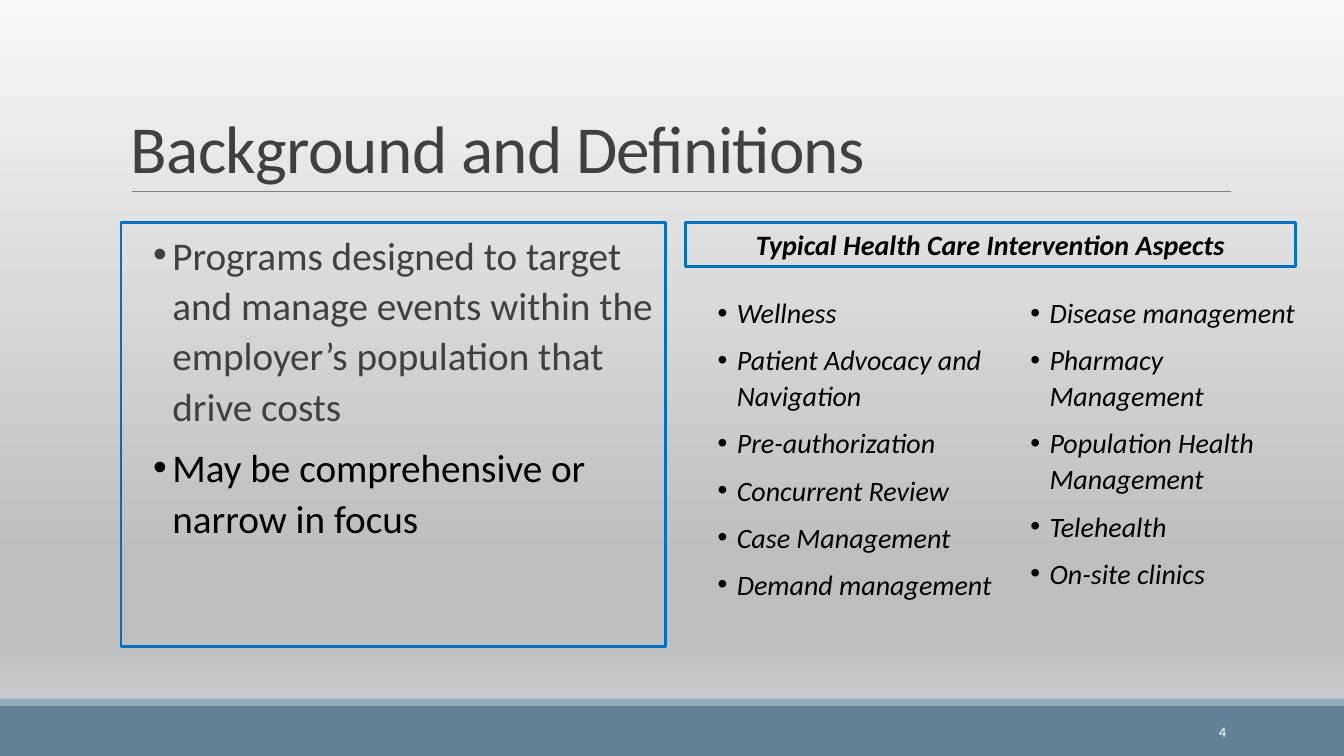
from dataclasses import dataclass

from lxml import etree
from pptx import Presentation
from pptx.dml.color import RGBColor
from pptx.enum.shapes import MSO_CONNECTOR, MSO_SHAPE
from pptx.enum.text import MSO_ANCHOR, MSO_AUTO_SIZE, PP_ALIGN
from pptx.oxml.ns import qn
from pptx.shapes.autoshape import Shape
from pptx.slide import Slide
from pptx.util import Pt

RECT = MSO_SHAPE.RECTANGLE
STRAIGHT = MSO_CONNECTOR.STRAIGHT
TOP, MIDDLE, BOTTOM = MSO_ANCHOR.TOP, MSO_ANCHOR.MIDDLE, MSO_ANCHOR.BOTTOM
LEFT, CENTER, RIGHT = PP_ALIGN.LEFT, PP_ALIGN.CENTER, PP_ALIGN.RIGHT
FIT_SHAPE = MSO_AUTO_SIZE.SHAPE_TO_FIT_TEXT


@dataclass(frozen=True)
class Theme:
    font: str = "Calibri"
    bullet_font: str = "Arial"
    title_size: float = 48
    body_size: float = 28
    aspect_size: float = 20
    number_size: float = 10.5
    dark: str = "404040"
    black: str = "000000"
    white: str = "FFFFFF"
    rule: str = "808080"
    frame: str = "0070C0"
    footer: str = "618197"
    footer_edge: str = "92A9B9"
    backdrop: tuple[tuple[int, str], ...] = (
        (0, "F8F8F8"), (74, "BEBEC1"), (83, "BEBEC1"), (100, "D4D4D5"))


THEME = Theme()


@dataclass(frozen=True)
class Box:
    left: float
    top: float
    width: float
    height: float

    def lengths(self) -> tuple[Pt, Pt, Pt, Pt]:
        return Pt(self.left), Pt(self.top), Pt(self.width), Pt(self.height)


@dataclass(frozen=True)
class Style:
    size: float
    color: str
    bold: bool = False
    italic: bool = False
    spacing: float = 0


@dataclass(frozen=True)
class Band:
    box: Box
    color: str


@dataclass(frozen=True)
class BulletList:
    box: Box
    items: tuple[tuple[str, Style], ...]
    framed: bool = False


@dataclass(frozen=True)
class Label:
    box: Box
    text: str
    style: Style
    align: PP_ALIGN = LEFT
    anchor: MSO_ANCHOR = TOP
    line_spacing: float = 1
    framed: bool = False


TITLE = Style(THEME.title_size, THEME.dark, spacing=-0.5)
BODY = Style(THEME.body_size, THEME.dark)
BODY_BLACK = Style(THEME.body_size, THEME.black)
ASPECT = Style(THEME.aspect_size, THEME.black, italic=True)
HEADING = Style(THEME.aspect_size, THEME.black, bold=True, italic=True)
NUMBER = Style(THEME.number_size, THEME.white)

BANDS = (
    Band(Box(0, 504, 960, 36), THEME.footer),
    Band(Box(0, 499, 960, 5), THEME.footer_edge),
)

LABELS = (
    Label(Box(86.4, 22.5, 792, 114.5), "Background and Definitions", TITLE,
          anchor=BOTTOM, line_spacing=0.85),
    Label(Box(489.6, 159, 435.6, 31.5), "Typical Health Care Intervention Aspects",
          HEADING, align=CENTER, framed=True),
    Label(Box(780, 508.5, 103, 28.75), "4", NUMBER, align=RIGHT, anchor=MIDDLE),
)

ASPECTS_LEFT = ("Wellness", "Patient Advocacy and Navigation", "Pre-authorization",
                "Concurrent Review", "Case Management", "Demand management")
ASPECTS_RIGHT = ("Disease management", "Pharmacy Management",
                 "Population Health Management", "Telehealth", "On-site clinics")

LISTS = (
    BulletList(Box(86.4, 159, 389, 303), (
        ("Programs designed to target and manage events within the "
         "employer’s population that drive costs", BODY),
        ("May be comprehensive or narrow in focus", BODY_BLACK),
    ), framed=True),
    BulletList(Box(489.6, 206, 223, 256), tuple((t, ASPECT) for t in ASPECTS_LEFT)),
    BulletList(Box(713, 206, 213, 241), tuple((t, ASPECT) for t in ASPECTS_RIGHT)),
)


def rgb(color: str) -> RGBColor:
    return RGBColor.from_string(color)


def paint_backdrop(s: Slide) -> None:
    fill = s.background.fill
    fill.gradient()
    fill.gradient_angle = 270
    stops = s.element.find(".//" + qn("a:gsLst"))
    for stop in list(stops):
        stops.remove(stop)
    for percent, color in THEME.backdrop:
        stop = etree.SubElement(stops, qn("a:gs"), pos=str(percent * 1000))
        etree.SubElement(stop, qn("a:srgbClr"), val=color)


def add_band(s: Slide, band: Band) -> None:
    sp = s.shapes.add_shape(RECT, *band.box.lengths())
    sp.shadow.inherit = False
    sp.fill.solid()
    sp.fill.fore_color.rgb = rgb(band.color)
    sp.line.fill.background()


def add_title_rule(s: Slide) -> None:
    rule = s.shapes.add_connector(STRAIGHT, Pt(94.3), Pt(136.5), Pt(879), Pt(136.5))
    rule.line.color.rgb = rgb(THEME.rule)
    rule.line.width = Pt(0.5)
    etree.SubElement(rule.element.spPr, qn("a:effectLst"))


def add_box(s: Slide, box: Box, framed: bool) -> Shape:
    """Add a wrapping text holder, outlined when framed."""
    if framed:
        sp = s.shapes.add_shape(RECT, *box.lengths())
        sp.shadow.inherit = False
        sp.fill.background()
        sp.line.color.rgb = rgb(THEME.frame)
        sp.line.width = Pt(2)
    else:
        sp = s.shapes.add_textbox(*box.lengths())
    sp.text_frame.word_wrap = True
    return sp


def style_runs(p, style: Style) -> None:
    for r in p.runs:
        r.font.name = THEME.font
        r.font.size = Pt(style.size)
        r.font.color.rgb = rgb(style.color)
        r.font.bold = style.bold
        r.font.italic = style.italic
        if style.spacing:
            r.font._element.set("spc", str(round(style.spacing * 100)))


def add_label(s: Slide, label: Label) -> None:
    tf = add_box(s, label.box, label.framed).text_frame
    tf.text = label.text
    tf.vertical_anchor = label.anchor
    if label.framed:
        tf.auto_size = FIT_SHAPE
    p = tf.paragraphs[0]
    p.alignment = label.align
    p.line_spacing = label.line_spacing
    style_runs(p, label.style)


def add_bullet_list(s: Slide, bullets: BulletList) -> None:
    tf = add_box(s, bullets.box, bullets.framed).text_frame
    tf.margin_left = tf.margin_right = 0
    tf.vertical_anchor = TOP
    tf.text = "\n".join(text for text, _ in bullets.items)
    for p, (_, style) in zip(tf.paragraphs, bullets.items):
        props = p._p.get_or_add_pPr()
        props.set("marL", str(Pt(36.7)))
        props.set("indent", str(-Pt(13.7)))
        etree.SubElement(props, qn("a:buFont"), typeface=THEME.bullet_font)
        etree.SubElement(props, qn("a:buChar"), char="•")
        p.alignment = LEFT
        p.line_spacing = 1.07
        p.space_after = Pt(8)
        style_runs(p, style)


def main() -> None:
    prs = Presentation()
    prs.slide_width, prs.slide_height = Pt(960), Pt(540)
    s = prs.slides.add_slide(prs.slide_layouts[6])
    paint_backdrop(s)
    for band in BANDS:
        add_band(s, band)
    add_title_rule(s)
    for label in LABELS:
        add_label(s, label)
    for bullets in LISTS:
        add_bullet_list(s, bullets)
    prs.save("out.pptx")


if __name__ == "__main__":
    main()
